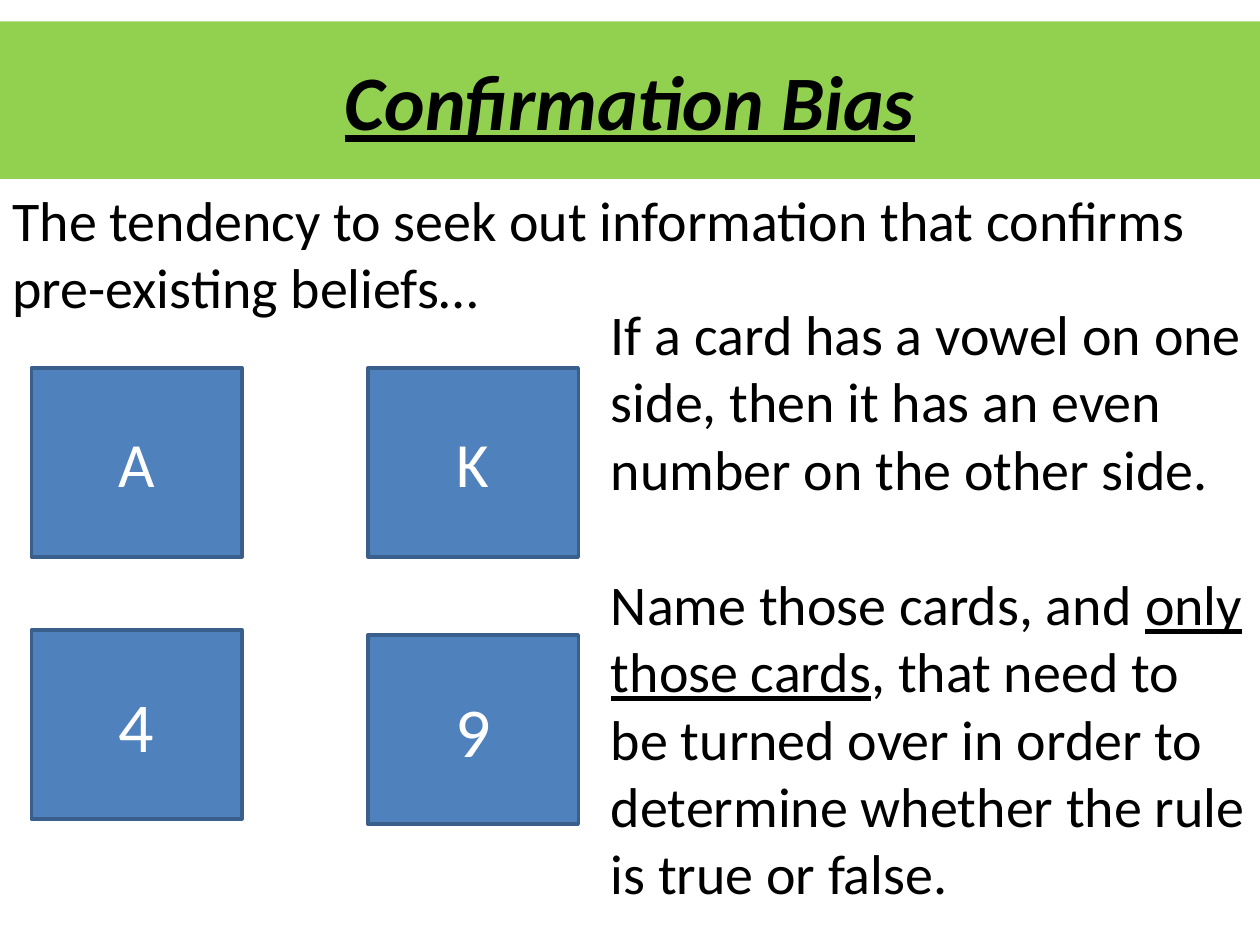
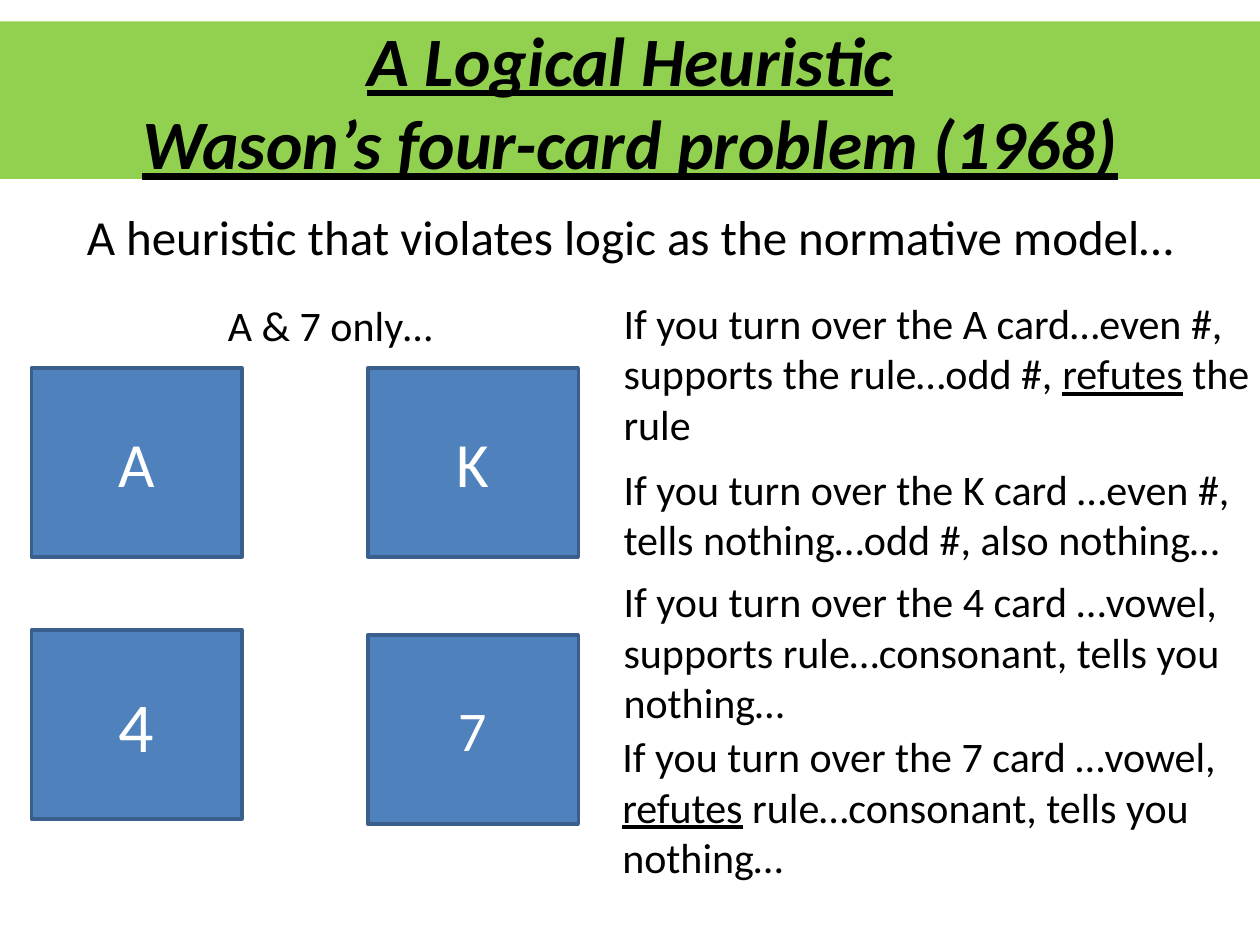
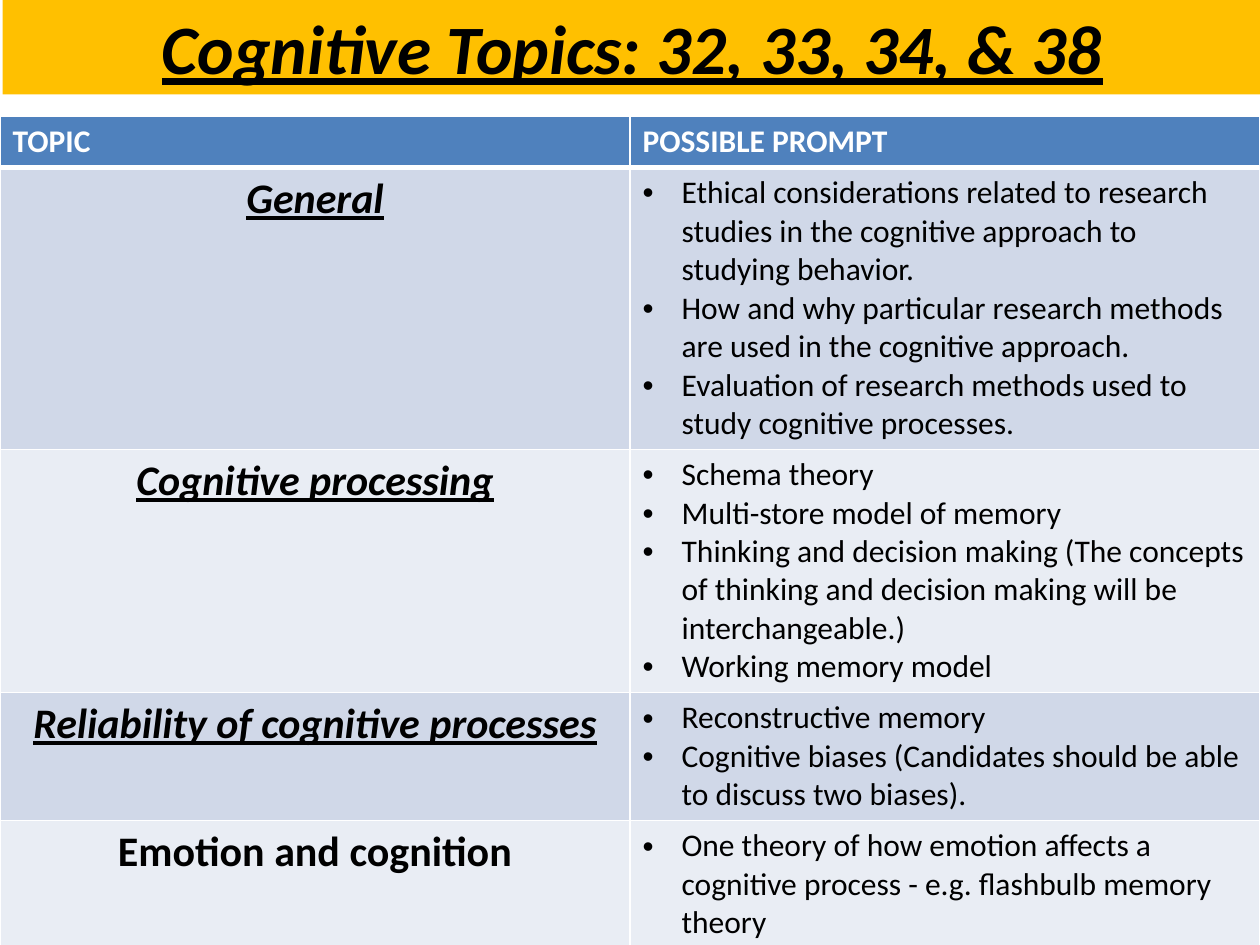
import lxml.etree
import pptx
import pptx.dml.color
import pptx.enum.shapes
import pptx.enum.text
import pptx.oxml.ns
import pptx.util

Inches = pptx.util.Inches
Pt = pptx.util.Pt
qn = pptx.oxml.ns.qn
CENTER = pptx.enum.text.PP_ALIGN.CENTER
LEFT = pptx.enum.text.PP_ALIGN.LEFT
MIDDLE = pptx.enum.text.MSO_ANCHOR.MIDDLE

FONT = "Calibri"
BLACK, WHITE = "000000", "FFFFFF"
GREEN, AMBER = "92D050", "FFC000"
BLUE, BLUE_EDGE = "4F81BD", "3A5F8C"
ROW_BANDS = ("D0D8E8", "E9EDF4")

BAND_BOX = (0, 0.17, 10, 1.25)
CARDS_BOX = (0.25, 2.92, 4.34, 3.62)
CARD_SIZE = (1.67, 1.5)

TOPICS = [
    ("General", True, [
        "Ethical considerations related to research studies in the cognitive approach to studying behavior.",
        "How and why particular research methods are used in the cognitive approach.",
        "Evaluation of research methods used to study cognitive processes."]),
    ("Cognitive processing", True, [
        "Schema theory",
        "Multi-store model of memory",
        "Thinking and decision making (The concepts of thinking and decision making will be interchangeable.)",
        "Working memory model"]),
    ("Reliability of cognitive processes", True, [
        "Reconstructive memory",
        "Cognitive biases (Candidates should be able to discuss two biases)."]),
    ("Emotion and cognition", False, [
        "One theory of how emotion affects a cognitive process - e.g. flashbulb memory theory"]),
]


def color(value):
    """Turn a hex string into a colour."""
    return pptx.dml.color.RGBColor.from_string(value)


def fill(target, value):
    """Give a shape or cell a solid fill."""
    target.fill.solid()
    target.fill.fore_color.rgb = color(value)


def style(p, size, value=BLACK, align=LEFT, bold=False, italic=False, underline=None):
    """Format a paragraph and all its runs."""
    p.alignment = align
    for r in p.runs:
        r.font.name = FONT
        r.font.size = Pt(size)
        r.font.color.rgb = color(value)
        r.font.bold = bold
        r.font.italic = italic
        if underline is not None:
            r.font.underline = underline


def add_title(slide, text, size, box=BAND_BOX, band=GREEN):
    """Place the title placeholder as a coloured band."""
    sp = slide.shapes.title
    sp.left, sp.top, sp.width, sp.height = map(Inches, box)
    fill(sp, band)
    tf = sp.text_frame
    tf.auto_size = pptx.enum.text.MSO_AUTO_SIZE.NONE
    tf.vertical_anchor = MIDDLE
    p = tf.paragraphs[0]
    p.text = text
    style(p, size, align=CENTER, bold=True, italic=True, underline=True)
    for br in p._p.findall(qn("a:br")):
        lxml.etree.SubElement(br, qn("a:rPr"), sz=str(round(size * 100)))


def add_text(slide, box, paragraphs, size, align=LEFT, gap=0):
    """Add a text box in which parts between underscores are underlined."""
    tf = slide.shapes.add_textbox(*map(Inches, box)).text_frame
    tf.word_wrap = True
    tf.auto_size = pptx.enum.text.MSO_AUTO_SIZE.SHAPE_TO_FIT_TEXT
    for i, text in enumerate(paragraphs):
        p = tf.add_paragraph() if i else tf.paragraphs[0]
        if i:
            p.space_before = Pt(gap)
        for j, part in enumerate(text.split("_")):
            r = p.add_run()
            r.text = part
            r.font.underline = j % 2 == 1
        style(p, size, align=align)


def add_cards(slide, box, faces):
    """Lay out four cards in the corners of a box, row by row."""
    left, top, width, height = box
    card_width, card_height = CARD_SIZE
    for i, (face, size) in enumerate(faces):
        row, col = divmod(i, 2)
        x = left + col * (width - card_width)
        y = top + row * (height - card_height - 0.04 * (1 - col))
        sp = slide.shapes.add_shape(pptx.enum.shapes.MSO_SHAPE.RECTANGLE,
                                    *map(Inches, (x, y, card_width, card_height)))
        sp.shadow.inherit = False
        fill(sp, BLUE)
        sp.line.color.rgb = color(BLUE_EDGE)
        sp.line.width = Pt(2)
        sp.text_frame.text = face
        sp.text_frame.vertical_anchor = MIDDLE
        style(sp.text_frame.paragraphs[0], size, WHITE, CENTER)


def set_borders(cell, top=1, bottom=1):
    """Draw white borders around a cell."""
    tc_pr = cell._tc.get_or_add_tcPr()
    for side, width in (("L", 1), ("R", 1), ("T", top), ("B", bottom)):
        ln = lxml.etree.SubElement(tc_pr, qn(f"a:ln{side}"), w=str(Pt(width)))
        solid = lxml.etree.SubElement(ln, qn("a:solidFill"))
        lxml.etree.SubElement(solid, qn("a:srgbClr"), val=WHITE)


def add_bullet(p):
    """Give a paragraph a hanging bullet."""
    p_pr = p._p.get_or_add_pPr()
    p_pr.set("marL", str(Inches(0.31)))
    p_pr.set("indent", str(Inches(-0.31)))
    lxml.etree.SubElement(p_pr, qn("a:buFont"), typeface="Arial")
    lxml.etree.SubElement(p_pr, qn("a:buChar"), char="•")


def add_topics(slide, box, topics):
    """Add the table of topics and their possible prompts."""
    left, top, width, row_height = box
    rows = len(topics) + 1
    table = slide.shapes.add_table(rows, 2, *map(Inches, (left, top, width, row_height * rows))).table
    for col, heading in enumerate(("TOPIC", "POSSIBLE PROMPT")):
        cell = table.cell(0, col)
        set_borders(cell, bottom=3)
        fill(cell, BLUE)
        cell.text_frame.text = heading
        style(cell.text_frame.paragraphs[0], 18, WHITE, bold=True)
    for row, (topic, marked, prompts) in enumerate(topics, 1):
        name, detail = table.cell(row, 0), table.cell(row, 1)
        for cell in (name, detail):
            set_borders(cell, top=3 if row == 1 else 1)
            fill(cell, ROW_BANDS[(row - 1) % 2])
        name.text_frame.text = topic
        style(name.text_frame.paragraphs[0], 24, align=CENTER, bold=True, italic=marked, underline=marked)
        detail.text_frame.text = "\n".join(prompts)
        for p in detail.text_frame.paragraphs:
            style(p, 18)
            add_bullet(p)


def build_bias(slide):
    """Build the slide that sets the card problem."""
    add_title(slide, "Confirmation Bias", 44)
    add_text(slide, (0, 1.42, 10, 1.18),
             ["The tendency to seek out information that confirms pre-existing beliefs…"], 32)
    add_cards(slide, CARDS_BOX, [("A", 36), ("K", 36), ("4", 40), ("9", 40)])
    add_text(slide, (4.75, 2.33, 5.25, 4.95), [
        "If a card has a vowel on one side, then it has an even number on the other side.",
        "Name those cards, and _only those cards_, that need to be turned over in order to "
        "determine whether the rule is true or false."], 32, gap=39)


def build_heuristic(slide):
    """Build the slide that solves the card problem."""
    add_title(slide, "A Logical Heuristic\vWason’s four-card problem (1968)", 39.6)
    add_text(slide, (0, 1.59, 10, 0.57),
             ["A heuristic that violates logic as the normative model…"], 28, CENTER)
    add_cards(slide, CARDS_BOX, [("A", 36), ("K", 36), ("4", 40), ("7", 32)])
    for left, top, height, text in (
            (4.85, 2.31, 1.31, "If you turn over the A card…even #, supports the rule…odd #, _refutes_ the rule"),
            (4.85, 3.63, 0.91, "If you turn over the K card …even #, tells nothing…odd #, also nothing…"),
            (4.85, 4.52, 1.31, "If you turn over the 4 card …vowel, supports rule…consonant, tells you nothing…"),
            (4.84, 5.75, 1.31, "If you turn over the 7 card …vowel, _refutes_ rule…consonant, tells you nothing…")):
        add_text(slide, (left, top, 5.25, height), [text], 24)
    add_text(slide, (0.2, 2.33, 4.84, 0.5), ["A & 7 only…"], 24, CENTER)


def build_topics(slide):
    """Build the slide that lists the topics."""
    add_title(slide, "Cognitive Topics: 32, 33, 34, & 38", 39.6, (0.02, 0, 10, 0.75), AMBER)
    add_topics(slide, (0, 0.92, 10, 0.41), TOPICS)


def main():
    """Build and save the presentation."""
    prs = pptx.Presentation()
    prs.slide_width, prs.slide_height = Inches(10), Inches(7.5)
    for build in (build_bias, build_heuristic, build_topics):
        build(prs.slides.add_slide(prs.slide_layouts[5]))
    prs.save("out.pptx")


if __name__ == "__main__":
    main()
